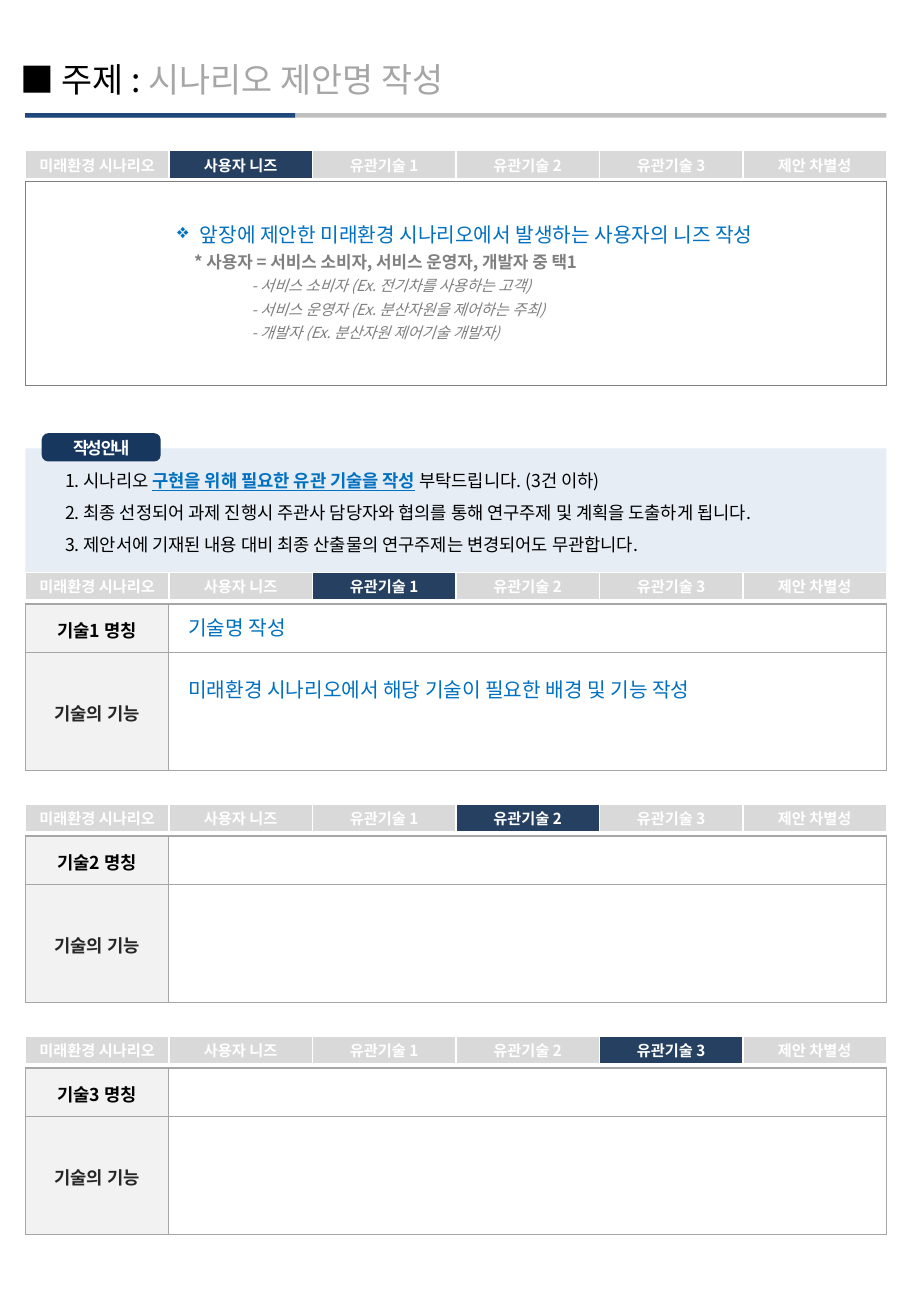
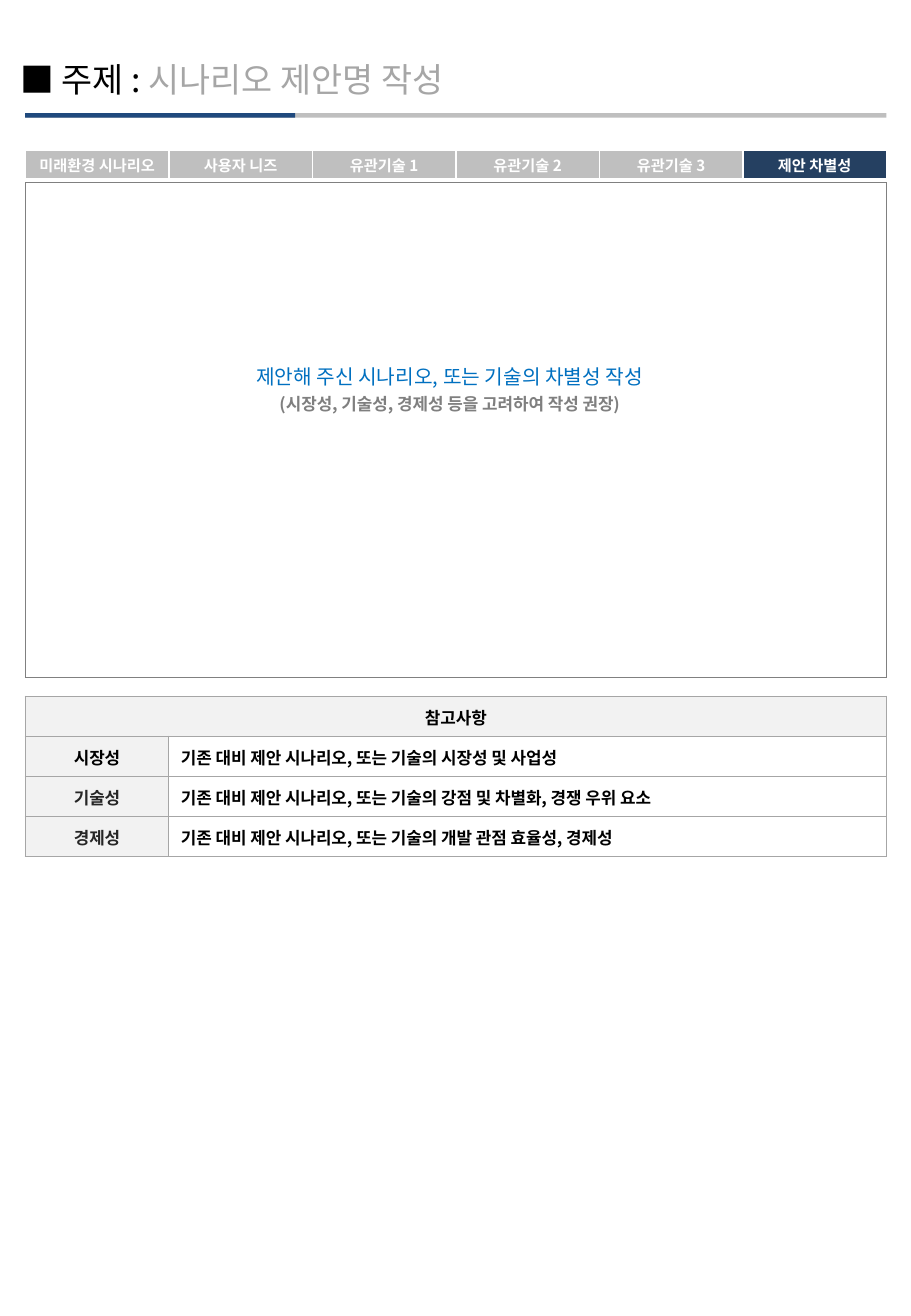
"""Build the two proposal pages: user needs with related technologies, then differentiation."""
from dataclasses import dataclass

from lxml.etree import SubElement
from pptx import Presentation
from pptx.dml.color import RGBColor
from pptx.enum.shapes import MSO_SHAPE
from pptx.enum.text import MSO_ANCHOR, MSO_AUTO_SIZE, PP_ALIGN
from pptx.oxml.ns import qn
from pptx.util import Pt


@dataclass(frozen=True)
class Theme:
    font: str = "Noto Sans CJK KR"
    black: str = "000000"
    white: str = "FFFFFF"
    navy: str = "254061"
    badge: str = "17375E"
    accent: str = "1F497D"
    prompt: str = "0070C0"
    hint: str = "7F7F7F"
    muted: str = "A6A6A6"
    frame: str = "808080"
    rule: str = "BFBFBF"
    tab: str = "D9D9D9"
    header: str = "F2F2F2"
    label: str = "262626"
    guide: str = "DCE6F2"
    title_size: float = 20
    prompt_size: float = 12
    body_size: float = 10.5
    hint_size: float = 10
    small_size: float = 9


@dataclass(frozen=True)
class Style:
    size: float
    color: str
    bold: bool = False
    italic: bool = False
    underline: bool = False


@dataclass(frozen=True)
class Line:
    runs: tuple
    align: PP_ALIGN = PP_ALIGN.LEFT
    margin: float = 0
    hanging: float = 0
    bullet: str = ""
    before: float = 0
    spacing: float = 1


THEME = Theme()
TITLE = Style(THEME.title_size, THEME.black)
TITLE_HINT = Style(THEME.title_size, THEME.muted)
TAB = Style(THEME.small_size, THEME.white, bold=True)
BADGE = Style(THEME.hint_size, THEME.white, bold=True)
PROMPT = Style(THEME.prompt_size, THEME.prompt)
HINT = Style(THEME.hint_size, THEME.hint, bold=True)
EXAMPLE = Style(THEME.small_size, THEME.hint, italic=True)
GUIDE = Style(THEME.body_size, THEME.black)
GUIDE_KEY = Style(THEME.body_size, THEME.prompt, bold=True, underline=True)
NAME = Style(THEME.body_size, THEME.black, bold=True)
FUNCTION = Style(THEME.body_size, THEME.label, bold=True)
NOTE = Style(THEME.hint_size, THEME.black, bold=True)
NOTE_LABEL = Style(THEME.hint_size, THEME.label, bold=True)

PAGE_WIDTH, PAGE_HEIGHT = 540, 780
LEFT, WIDTH = 15, 510.5
LABEL_WIDTH = 85
COLUMNS = [LABEL_WIDTH, WIDTH - LABEL_WIDTH]
CELL_INSETS = (7.2, 4.3, 7.2, 2.9)
NO_INSETS = (0, 0, 0, 0)
TAB_HEIGHT, FIRST_TABS_TOP = 16.5, 89.25
TECHNOLOGY_TOP, TECHNOLOGY_PITCH, TECHNOLOGY_OFFSET = 339.25, 137.5, 18.75
TECHNOLOGY_ROWS = [28.8, 69.8]

TABS = ["미래환경 시나리오", "사용자 니즈", "유관기술 1", "유관기술 2", "유관기술 3", "제안 차별성"]
TITLE_LINES = [Line((("■ 주제 : ", TITLE), ("시나리오 제안명 작성", TITLE_HINT)))]
NEEDS = [
    Line((("앞장에 제안한 미래환경 시나리오에서 발생하는 사용자의 니즈 작성", PROMPT),),
         PP_ALIGN.CENTER, margin=13.5, hanging=13.5, bullet="❖"),
    Line((("* 사용자 = 서비스 소비자, 서비스 운영자, 개발자 중 택1", HINT),), margin=59, before=3),
] + [
    Line(((text, EXAMPLE),), margin=93, before=3)
    for text in (
        "- 서비스 소비자 (Ex. 전기차를 사용하는 고객)",
        "- 서비스 운영자 (Ex. 분산자원을 제어하는 주최)",
        "- 개발자 (Ex. 분산자원 제어기술 개발자)",
    )
]
GUIDELINES = [
    Line(runs, margin=42.5, hanging=26, spacing=1.5)
    for runs in (
        (("1. 시나리오 ", GUIDE), ("구현을 위해 필요한 유관 기술을 작성", GUIDE_KEY),
         (" 부탁드립니다. (3건 이하)", GUIDE)),
        (("2. 최종 선정되어 과제 진행시 주관사 담당자와 협의를 통해 연구주제 및 계획을 도출하게 됩니다.", GUIDE),),
        (("3. 제안서에 기재된 내용 대비 최종 산출물의 연구주제는 변경되어도 무관합니다.", GUIDE),),
    )
]
BADGE_LINES = [Line((("작성 안내", BADGE),), PP_ALIGN.CENTER)]
TECHNOLOGIES = ["기술1 명칭", "기술2 명칭", "기술3 명칭"]
TECHNOLOGY_PROMPTS = [
    ("기술명 작성", 361, 103),
    ("미래환경 시나리오에서 해당 기술이 필요한 배경 및 기능 작성", 398, 364),
]
DIFFERENCE = [
    Line((("제안해 주신 시나리오, 또는 기술의 차별성 작성", PROMPT),), PP_ALIGN.CENTER),
    Line((("(시장성, 기술성, 경제성 등을 고려하여 작성 권장)", HINT),), PP_ALIGN.CENTER, before=3),
]
REFERENCES = [
    ("시장성", "기존 대비 제안 시나리오, 또는 기술의 시장성 및 사업성", NOTE),
    ("기술성", "기존 대비 제안 시나리오, 또는 기술의 강점 및 차별화, 경쟁 우위 요소", NOTE_LABEL),
    ("경제성", "기존 대비 제안 시나리오, 또는 기술의 개발 관점 효율성, 경제성", NOTE_LABEL),
]


def rgb(value):
    return RGBColor.from_string(value)


def style_run(run, style):
    font = run.font
    font.name, font.size = THEME.font, Pt(style.size)
    font.bold, font.italic, font.underline = style.bold, style.italic, style.underline
    font.color.rgb = rgb(style.color)
    SubElement(font._element, qn("a:ea")).set("typeface", THEME.font)


def write(text_frame, lines):
    for index, line in enumerate(lines):
        paragraph = text_frame.add_paragraph() if index else text_frame.paragraphs[0]
        paragraph.alignment = line.align
        paragraph.line_spacing = line.spacing
        if line.before:
            paragraph.space_before = Pt(line.before)
        properties = paragraph._p.get_or_add_pPr()
        properties.set("marL", str(int(Pt(line.margin))))
        properties.set("indent", str(int(Pt(-line.hanging))))
        if line.bullet:
            SubElement(properties, qn("a:buChar")).set("char", line.bullet)
        for text, style in line.runs:
            run = paragraph.add_run()
            run.text = text
            style_run(run, style)


def add_text(slide, lines, left, top, width, height):
    text_frame = slide.shapes.add_textbox(Pt(left), Pt(top), Pt(width), Pt(height)).text_frame
    text_frame.word_wrap = True
    text_frame.auto_size = MSO_AUTO_SIZE.SHAPE_TO_FIT_TEXT
    write(text_frame, lines)


def add_block(slide, kind, color, left, top, width, height):
    shape = slide.shapes.add_shape(kind, Pt(left), Pt(top), Pt(width), Pt(height))
    shape.shadow.inherit = False
    shape.fill.solid()
    shape.fill.fore_color.rgb = rgb(color)
    shape.line.fill.background()
    shape.text_frame.word_wrap = True
    shape.text_frame.vertical_anchor = MSO_ANCHOR.MIDDLE
    return shape


def add_grid(slide, top, columns, rows, border, border_width):
    shape = slide.shapes.add_table(len(rows), len(columns), Pt(LEFT), Pt(top),
                                   Pt(sum(columns)), Pt(sum(rows)))
    table = shape.table
    table.first_row = table.horz_banding = False
    for column, width in zip(table.columns, columns):
        column.width = Pt(width)
    for row, height in zip(table.rows, rows):
        row.height = Pt(height)
    for cell in table.iter_cells():
        properties = cell._tc.get_or_add_tcPr()
        for side in ("a:lnL", "a:lnR", "a:lnT", "a:lnB"):
            edge = SubElement(properties, qn(side), w=str(int(Pt(border_width))))
            SubElement(SubElement(edge, qn("a:solidFill")), qn("a:srgbClr")).set("val", border)
        cell.fill.background()
    return table


def fill_cell(cell, color, text="", style=NAME, align=PP_ALIGN.CENTER, insets=CELL_INSETS):
    cell.fill.solid()
    cell.fill.fore_color.rgb = rgb(color)
    cell.vertical_anchor = MSO_ANCHOR.MIDDLE
    cell.margin_left, cell.margin_top, cell.margin_right, cell.margin_bottom = map(Pt, insets)
    if text:
        write(cell.text_frame, [Line(((text, style),), align)])
    else:
        end = cell.text_frame.paragraphs[0]._p.get_or_add_endParaRPr()
        end.set("sz", str(int(style.size * 100)))


def add_tabs(slide, top, active, idle_color=THEME.tab):
    columns = [WIDTH / len(TABS)] * len(TABS)
    table = add_grid(slide, top, columns, [TAB_HEIGHT], THEME.white, 1)
    for index, text in enumerate(TABS):
        color = THEME.navy if index == active else idle_color
        fill_cell(table.cell(0, index), color, text, TAB, insets=NO_INSETS)


def add_frame(slide, top, height):
    add_grid(slide, top, [WIDTH], [height], THEME.frame, 0.25)


def add_page(presentation):
    slide = presentation.slides.add_slide(presentation.slide_layouts[6])
    for color, width in ((THEME.rule, WIDTH), (THEME.accent, 160)):
        add_block(slide, MSO_SHAPE.RECTANGLE, color, LEFT, 67, width, 2.75)
    add_text(slide, TITLE_LINES, 5, 31, 514, 31.5)
    return slide


def add_guidelines(slide):
    panel = add_block(slide, MSO_SHAPE.RECTANGLE, THEME.guide, LEFT, 265.75, WIDTH, 73.5)
    color = panel.fill._xPr.find(".//" + qn("a:srgbClr"))
    SubElement(color, qn("a:alpha")).set("val", "70000")
    panel.text_frame.margin_top = 0
    write(panel.text_frame, GUIDELINES)
    badge = add_block(slide, MSO_SHAPE.ROUNDED_RECTANGLE, THEME.badge, 24.75, 256.75, 70.5, 16.75)
    badge.adjustments[0] = 0.23
    write(badge.text_frame, BADGE_LINES)
    for run in badge.text_frame.paragraphs[0].runs:
        run.font._element.set("spc", "-140")


def add_technology(slide, index, name):
    top = TECHNOLOGY_TOP + index * TECHNOLOGY_PITCH
    add_tabs(slide, top, TABS.index("유관기술 1") + index)
    table = add_grid(slide, top + TECHNOLOGY_OFFSET, COLUMNS, TECHNOLOGY_ROWS, THEME.muted, 1)
    for row, (text, style) in enumerate(((name, NAME), ("기술의 기능", FUNCTION))):
        fill_cell(table.cell(row, 0), THEME.header, text, style)
        fill_cell(table.cell(row, 1), THEME.white)


def add_needs_page(presentation):
    slide = add_page(presentation)
    add_tabs(slide, FIRST_TABS_TOP, TABS.index("사용자 니즈"))
    add_frame(slide, 107.5, 121)
    add_text(slide, NEEDS, 49, 128, 453.5, 78.5)
    add_guidelines(slide)
    for index, name in enumerate(TECHNOLOGIES):
        add_technology(slide, index, name)
    for text, top, width in TECHNOLOGY_PROMPTS:
        add_text(slide, [Line(((text, PROMPT),))], 104.5, top, width, 21.5)


def add_difference_page(presentation):
    slide = add_page(presentation)
    add_tabs(slide, FIRST_TABS_TOP, TABS.index("제안 차별성"), THEME.rule)
    add_frame(slide, 108, 293.5)
    add_text(slide, DIFFERENCE, 90.5, 212.5, 352, 36.5)
    rows = [23.75] * (len(REFERENCES) + 1)
    table = add_grid(slide, 412.75, COLUMNS, rows, THEME.muted, 1)
    table.cell(0, 0).merge(table.cell(0, 1))
    fill_cell(table.cell(0, 0), THEME.header, "참고사항", NOTE)
    for row, (label, text, label_style) in enumerate(REFERENCES, 1):
        fill_cell(table.cell(row, 0), THEME.header, label, label_style)
        fill_cell(table.cell(row, 1), THEME.white, text, NOTE, PP_ALIGN.LEFT)


def main():
    presentation = Presentation()
    presentation.slide_width, presentation.slide_height = Pt(PAGE_WIDTH), Pt(PAGE_HEIGHT)
    add_needs_page(presentation)
    add_difference_page(presentation)
    presentation.save("out.pptx")


if __name__ == "__main__":
    main()
